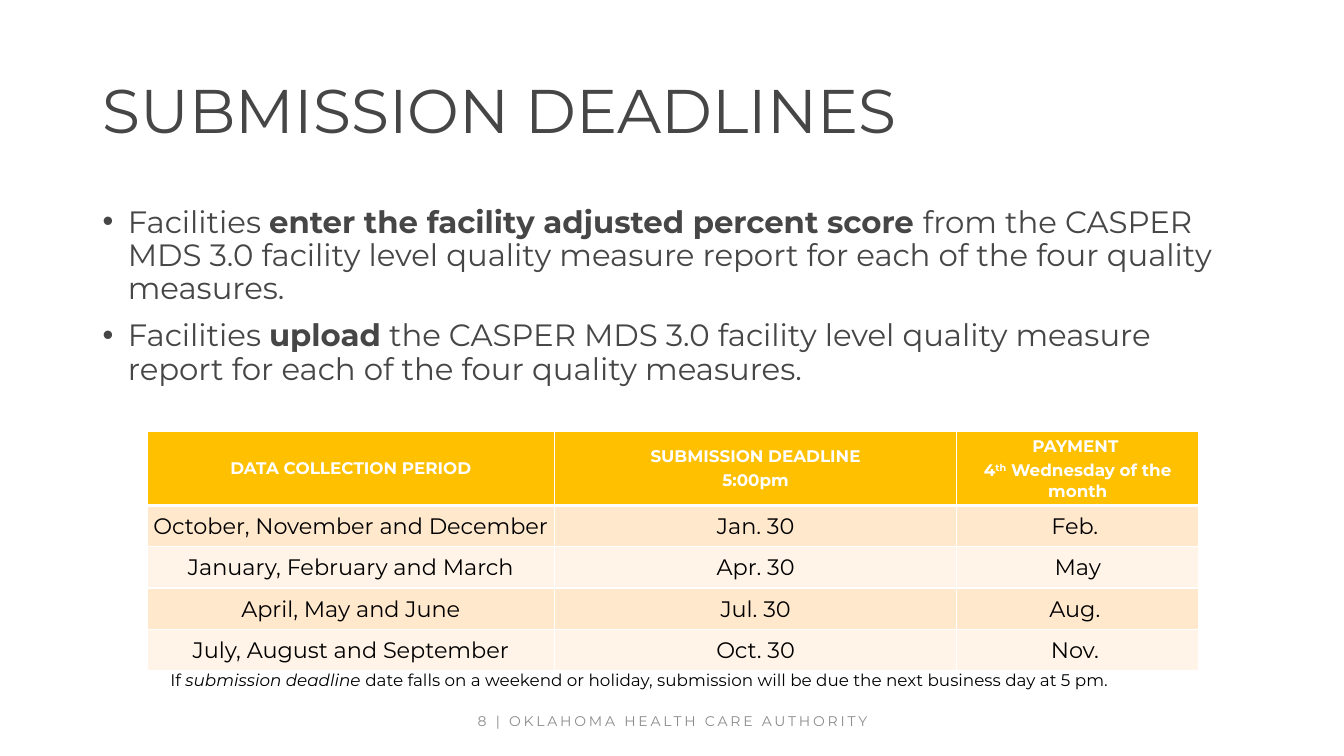
from lxml import etree
from pptx import Presentation
from pptx.dml.color import RGBColor
from pptx.enum import text
from pptx.oxml import ns
from pptx.util import Inches, Pt

FONT = "Montserrat"
GREY, WHITE, BLACK = "464646", "FFFFFF", "000000"
CENTER = text.PP_ALIGN.CENTER

deck = Presentation()
deck.slide_width, deck.slide_height = Inches(13.33), Inches(7.5)
slide = deck.slides.add_slide(deck.slide_layouts[6])


def style(paragraph, size, color, bold=None):
    font = paragraph.font
    font.name, font.size, font.bold = FONT, Pt(size), bold
    font.color.rgb = RGBColor.from_string(color)


def add_text(left, top, width, height, anchor=text.MSO_ANCHOR.TOP):
    frame = slide.shapes.add_textbox(
        Inches(left), Inches(top), Inches(width), Inches(height)).text_frame
    frame.word_wrap = True
    frame.vertical_anchor = anchor
    return frame


# Footer and title
footer = add_text(0.92, 6.95, 11.5, 0.4, text.MSO_ANCHOR.MIDDLE).paragraphs[0]
footer.alignment = CENTER
style(footer, 10, "8C8C8C")
footer_run = footer.add_run()
footer_run.text = "8 | OKLAHOMA HEALTH CARE AUTHORITY"
footer_run.font._element.set("spc", "200")

title = add_text(0.92, 0.4, 11.5, 1.45, text.MSO_ANCHOR.MIDDLE).paragraphs[0]
title.text = "SUBMISSION DEADLINES"
title.line_spacing = 0.9
style(title, 44, GREY)

# Instructions: plain, bold, plain
instructions = [
    ("Facilities ", "enter the facility adjusted percent score ",
     "from the CASPER MDS 3.0 facility level quality measure report "
     "for each of the four quality measures."),
    ("Facilities ", "upload",
     " the CASPER MDS 3.0 facility level quality measure report "
     "for each of the four quality measures."),
]
body = add_text(0.92, 2, 11.5, 2.14)
for i, parts in enumerate(instructions):
    instruction = body.add_paragraph() if i else body.paragraphs[0]
    instruction.line_spacing, instruction.space_before = 0.9, Pt(10)
    style(instruction, 22, GREY)
    for j, part in enumerate(parts):
        run = instruction.add_run()
        run.text = part
        if j == 1:
            run.font.bold = True
    props = instruction._p.get_or_add_pPr()
    props.set("marL", str(Inches(0.25)))
    props.set("indent", str(-Inches(0.25)))
    bullet_font = etree.Element(ns.qn("a:buFont"), typeface="Arial")
    bullet = etree.Element(ns.qn("a:buChar"), char="•")
    default_run = props.find(ns.qn("a:defRPr"))
    default_run.addprevious(bullet_font)
    default_run.addprevious(bullet)

# Deadline table
rows = [
    ("DATA COLLECTION PERIOD", "SUBMISSION DEADLINE\n5:00pm",
     "PAYMENT \n4th Wednesday of the month"),
    ("October, November and December", "Jan. 30", "Feb. "),
    ("January, February and March", "Apr. 30", "May"),
    ("April, May and June", "Jul. 30", "Aug. "),
    ("July, August and September", "Oct. 30", "Nov. "),
]
deadlines = slide.shapes.add_table(
    5, 3, Inches(1.46), Inches(4.28), Inches(10.42), Inches(2.36)).table
for column, width in zip(deadlines.columns, (4.04, 3.99, 2.4)):
    column.width = Inches(width)
for r, row in enumerate(rows):
    is_header = r == 0
    deadlines.rows[r].height = Inches(0.73 if is_header else 0.41)
    for c, content in enumerate(row):
        cell = deadlines.cell(r, c)
        cell.text = content
        cell.vertical_anchor = text.MSO_ANCHOR.MIDDLE
        if not is_header:
            cell.margin_left = cell.margin_right = cell.margin_top = Inches(0.01)
            cell.margin_bottom = 0
        for paragraph in cell.text_frame.paragraphs:
            paragraph.alignment = CENTER
            if is_header:
                paragraph.space_before = Pt(2.4)
                style(paragraph, 12, WHITE, True)
            else:
                style(paragraph, 16, BLACK, False)
        for side in "LRTB":
            thick = (r, side) in ((0, "B"), (1, "T"))
            line = etree.SubElement(cell._tc.get_or_add_tcPr(), ns.qn(f"a:ln{side}"),
                                    w=str(Pt(3 if thick else 1)))
            line_fill = etree.SubElement(line, ns.qn("a:solidFill"))
            etree.SubElement(line_fill, ns.qn("a:srgbClr"), val=WHITE)
        cell.fill.solid()
        cell.fill.fore_color.rgb = RGBColor.from_string(
            "FFC000" if is_header else "FFE8CC" if r % 2 else "FFF4E7")

payment_day = deadlines.cell(0, 2).text_frame.paragraphs[1]
payment_day.clear()
for part in ("4", "th", " Wednesday of the month"):
    run = payment_day.add_run()
    run.text = part
    if part == "th":
        run.font._element.set("baseline", "30000")

# Note below the table
note = add_text(1.59, 6.6, 10.42, 0.3).paragraphs[0]
style(note, 12, BLACK)
for part in ("If ", "submission deadline ",
             "date falls on a weekend or holiday, submission will be due "
             "the next business day at 5 pm."):
    run = note.add_run()
    run.text = part
    if part.startswith("submission"):
        run.font.italic = True

deck.save("out.pptx")
